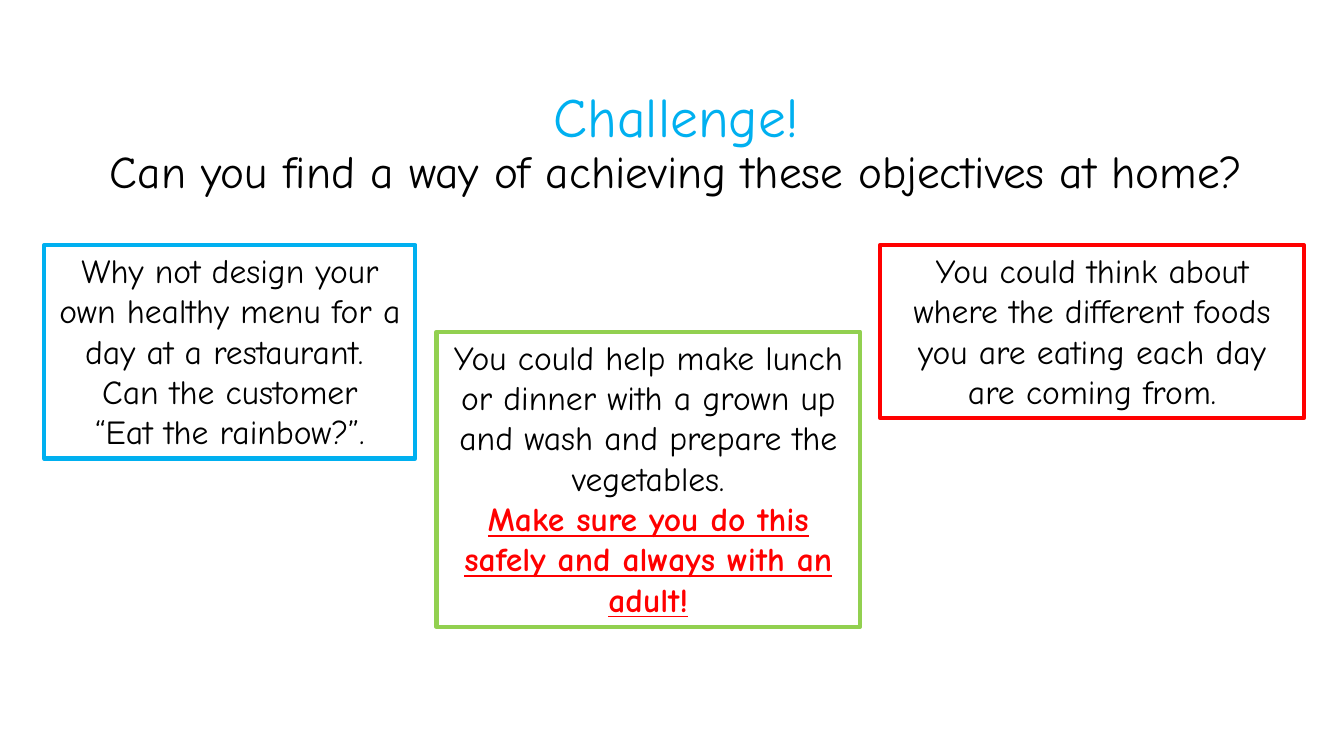
from pptx import Presentation
from pptx.dml.color import RGBColor
from pptx.enum.shapes import MSO_SHAPE as SHAPE
from pptx.enum.text import MSO_ANCHOR as ANCHOR, MSO_AUTO_SIZE as FIT, PP_ALIGN as ALIGN
from pptx.util import Inches, Pt

FONT = "Comic Neue"
WIDTH, HEIGHT = Inches(13.33), Inches(7.5)
COLORS = {
    "text": "000000",
    "blue": "00B0F0",
    "green": "92D050",
    "red": "FF0000",
}


def color(name):
    return RGBColor.from_string(COLORS[name])


def percent(left, top, width, height):
    return [int(share * side / 100) for share, side in
            zip((left, top, width, height), (WIDTH, HEIGHT, WIDTH, HEIGHT))]


def format_runs(p, size, name="text", strong=False):
    p.alignment = ALIGN.CENTER
    for r in p.runs:
        r.font.name = FONT
        r.font.size = Pt(size)
        r.font.color.rgb = color(name)
        if strong:
            r.font.bold = True
            r.font.underline = True


def add_title(s, place, lines):
    sp = s.shapes.title
    sp.left, sp.top, sp.width, sp.height = percent(*place)
    tf = sp.text_frame
    tf.auto_size = FIT.NONE
    tf.vertical_anchor = ANCHOR.TOP
    tf.margin_top = int(HEIGHT * 0.065)
    tf.text = "\n".join(text for text, _, _ in lines)
    for p, (_, size, name) in zip(tf.paragraphs, lines):
        p.line_spacing = 0.9
        p.space_before = Pt(0)
        format_runs(p, size, name)


def add_idea(s, place, border, lines, warning=None):
    sp = s.shapes.add_shape(SHAPE.RECTANGLE, *percent(*place))
    sp.shadow.inherit = False
    sp.fill.background()
    sp.line.color.rgb = color(border)
    sp.line.width = Pt(3)
    tf = sp.text_frame
    tf.word_wrap = True
    tf.auto_size = FIT.SHAPE_TO_FIT_TEXT
    tf.vertical_anchor = ANCHOR.TOP
    tf.text = "\n".join(lines)
    for p in tf.paragraphs:
        format_runs(p, 24)
    if warning:
        p = tf.add_paragraph()
        p.text = warning
        format_runs(p, 24, "red", strong=True)


def main():
    prs = Presentation()
    prs.slide_width, prs.slide_height = WIDTH, HEIGHT
    s = prs.slides.add_slide(prs.slide_layouts[5])
    add_title(s, (0.68, 5.33, 99.32, 19.33), [
        ("Challenge!", 39.6, "blue"),
        ("Can you find a way of achieving these objectives at home?", 32.4, "text"),
    ])
    add_idea(s, (32.48, 43.87, 31.51, 39.07), "green",
             ["You could help make lunch or dinner with a grown up "
              "and wash and prepare the vegetables."],
             "Make sure you do this safely and always with an adult!")
    add_idea(s, (65.49, 32.4, 31.51, 22.93), "red",
             ["You could think about where the different foods "
              "you are eating each day are coming from."])
    add_idea(s, (3.3, 32.4, 27.61, 28.27), "blue",
             ["Why not design your own healthy menu for a day "
              "at a restaurant.  Can the customer",
              "“Eat the rainbow?”."])
    prs.save("out.pptx")


if __name__ == "__main__":
    main()
